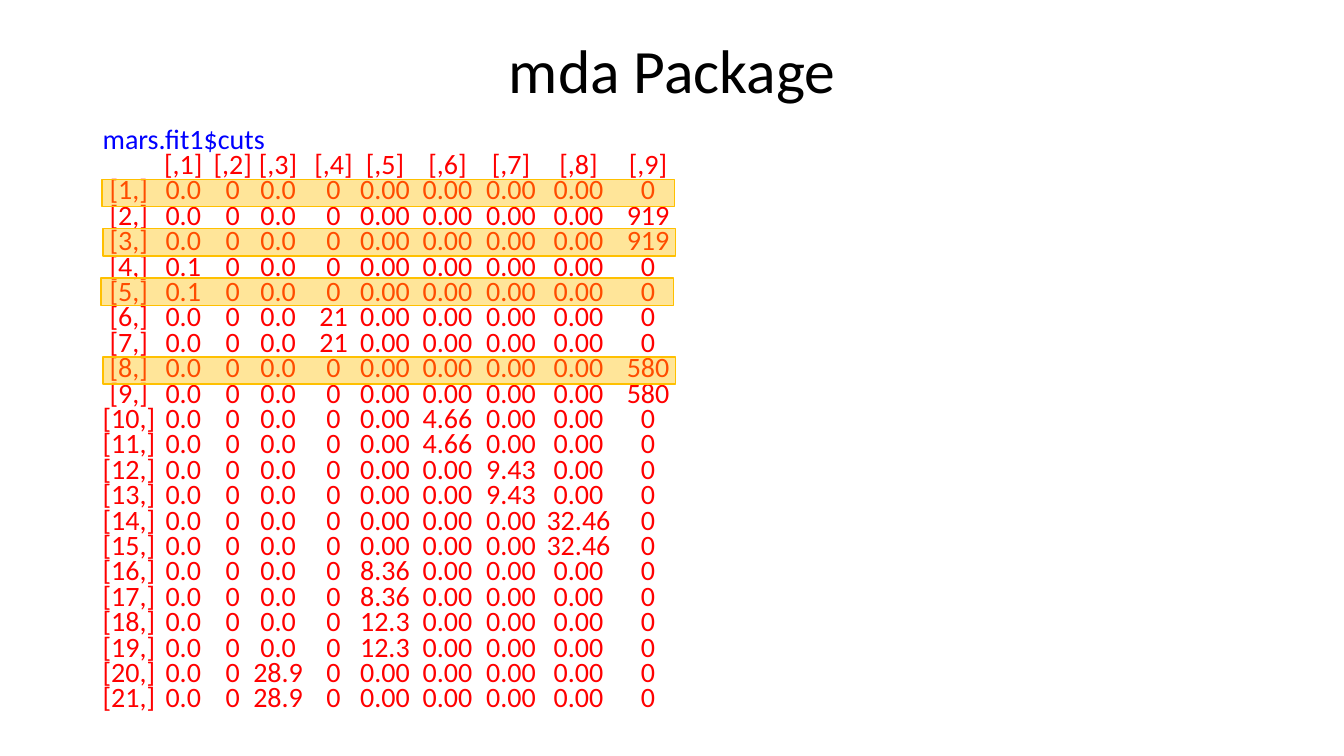
from lxml import etree
from pptx import Presentation
from pptx.dml.color import RGBColor
from pptx.enum.shapes import MSO_SHAPE
from pptx.enum.text import MSO_ANCHOR, PP_ALIGN
from pptx.oxml.ns import qn
from pptx.util import Inches, Pt

RECTANGLE = MSO_SHAPE.RECTANGLE
TOP, MIDDLE = MSO_ANCHOR.TOP, MSO_ANCHOR.MIDDLE
LEFT, CENTER = PP_ALIGN.LEFT, PP_ALIGN.CENTER
FONT = "Calibri"
BLACK, BLUE, RED, AMBER = "000000", "0000FF", "FF0000", "FFC000"

COMMAND = "mars.fit1$cuts"
COLUMN_CENTERS = [0.26, 0.8, 1.29, 1.74, 2.29, 2.8, 3.42, 4.05, 4.72, 5.41]
CUTS = [
    "0.0 0 0.0 0 0.00 0.00 0.00 0.00 0",
    "0.0 0 0.0 0 0.00 0.00 0.00 0.00 919",
    "0.0 0 0.0 0 0.00 0.00 0.00 0.00 919",
    "0.1 0 0.0 0 0.00 0.00 0.00 0.00 0",
    "0.1 0 0.0 0 0.00 0.00 0.00 0.00 0",
    "0.0 0 0.0 21 0.00 0.00 0.00 0.00 0",
    "0.0 0 0.0 21 0.00 0.00 0.00 0.00 0",
    "0.0 0 0.0 0 0.00 0.00 0.00 0.00 580",
    "0.0 0 0.0 0 0.00 0.00 0.00 0.00 580",
    "0.0 0 0.0 0 0.00 4.66 0.00 0.00 0",
    "0.0 0 0.0 0 0.00 4.66 0.00 0.00 0",
    "0.0 0 0.0 0 0.00 0.00 9.43 0.00 0",
    "0.0 0 0.0 0 0.00 0.00 9.43 0.00 0",
    "0.0 0 0.0 0 0.00 0.00 0.00 32.46 0",
    "0.0 0 0.0 0 0.00 0.00 0.00 32.46 0",
    "0.0 0 0.0 0 8.36 0.00 0.00 0.00 0",
    "0.0 0 0.0 0 8.36 0.00 0.00 0.00 0",
    "0.0 0 0.0 0 12.3 0.00 0.00 0.00 0",
    "0.0 0 0.0 0 12.3 0.00 0.00 0.00 0",
    "0.0 0 28.9 0 0.00 0.00 0.00 0.00 0",
    "0.0 0 28.9 0 0.00 0.00 0.00 0.00 0",
]
HIGHLIGHT_OFFSETS = [(0.09, 0.51), (0.1, 1.0), (0.08, 1.49), (0.1, 2.27)]


def color(value):
    return RGBColor.from_string(value)


def add_frame(slide, box, anchor=TOP):
    frame = slide.shapes.add_textbox(*map(Inches, box)).text_frame
    frame.word_wrap = True
    frame.vertical_anchor = anchor
    return frame


def write(paragraph, text, size=20, fill=BLACK, align=LEFT, spacing=1.0, before=0, tabs=()):
    paragraph.alignment = align
    paragraph.line_spacing = spacing
    paragraph.space_before = Pt(before)
    run = paragraph.add_run()
    run.text = text
    run.font.name = FONT
    run.font.size = Pt(size)
    run.font.color.rgb = color(fill)
    if tabs:
        stops = etree.SubElement(paragraph._p.get_or_add_pPr(), qn("a:tabLst"))
        for position in tabs:
            etree.SubElement(stops, qn("a:tab"), pos=str(Inches(position)), algn="ctr")


def add_title(slide, box):
    frame = add_frame(slide, box, MIDDLE)
    write(frame.paragraphs[0], "mda Package", size=44, align=CENTER, spacing=0.9)


def add_cuts(slide, box):
    frame = add_frame(slide, box)
    spacing = {"spacing": 0.6, "before": 3.75}
    write(frame.paragraphs[0], COMMAND, fill=BLUE, **spacing)
    header = ["", ""] + [f"[,{number}]" for number in range(1, 10)]
    rows = [["", f"[{number},]"] + cuts.split() for number, cuts in enumerate(CUTS, 1)]
    for row in [header] + rows:
        write(frame.add_paragraph(), "\t".join(row), fill=RED, tabs=COLUMN_CENTERS, **spacing)


def add_highlights(slide, box):
    left, top = box[:2]
    for dx, dy in HIGHLIGHT_OFFSETS:
        band = slide.shapes.add_shape(
            RECTANGLE, Inches(left + dx), Inches(top + dy), Inches(5.68), Inches(0.27))
        band.shadow.inherit = False
        band.fill.solid()
        band.fill.fore_color.rgb = color(AMBER)
        tint = band._element.spPr.find(qn("a:solidFill")).find(qn("a:srgbClr"))
        etree.SubElement(tint, qn("a:alpha"), val="40000")
        band.line.color.rgb = color(AMBER)
        band.line.width = Pt(1)


def main():
    deck = Presentation()
    deck.slide_width, deck.slide_height = Inches(13.33), Inches(7.5)
    slide = deck.slides.add_slide(deck.slide_layouts[6])
    cuts_box = (0.92, 1.27, 11.5, 5.95)
    add_title(slide, (0.92, 0, 11.5, 1.45))
    add_cuts(slide, cuts_box)
    add_highlights(slide, cuts_box)
    deck.save("out.pptx")


if __name__ == "__main__":
    main()
